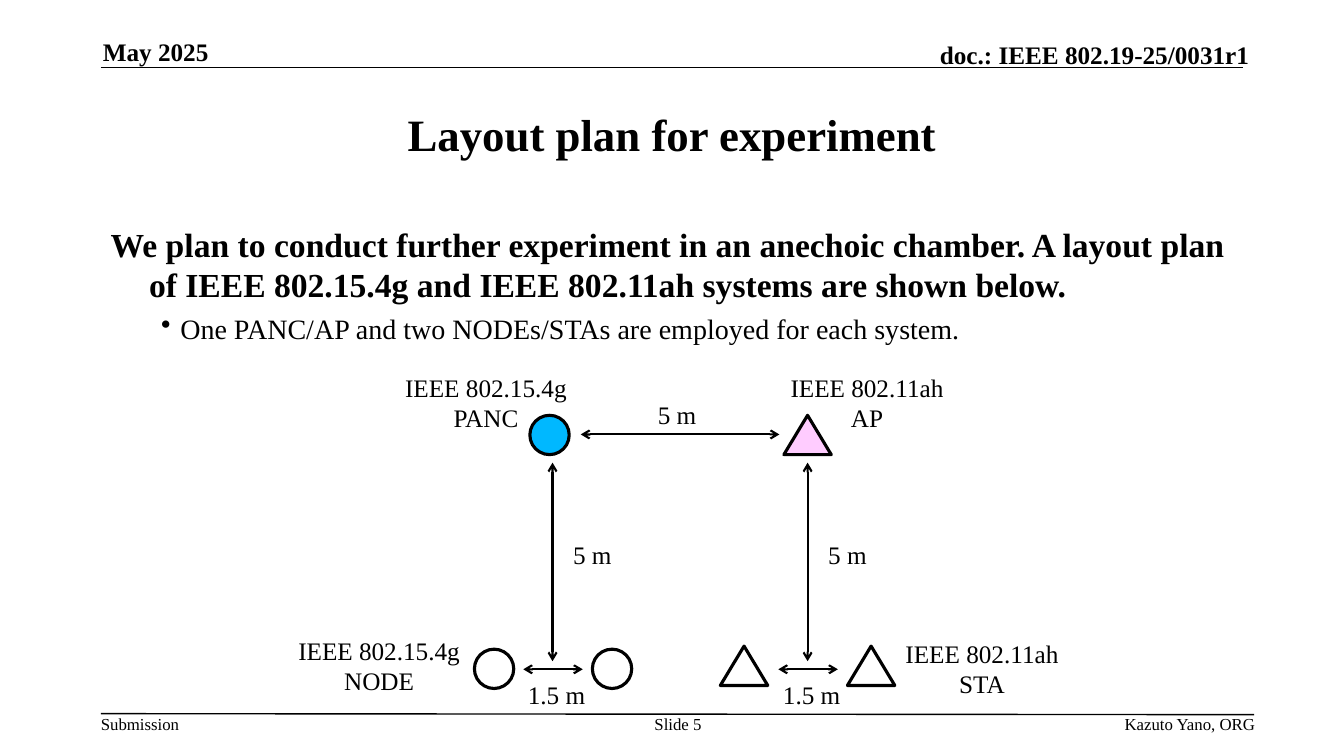
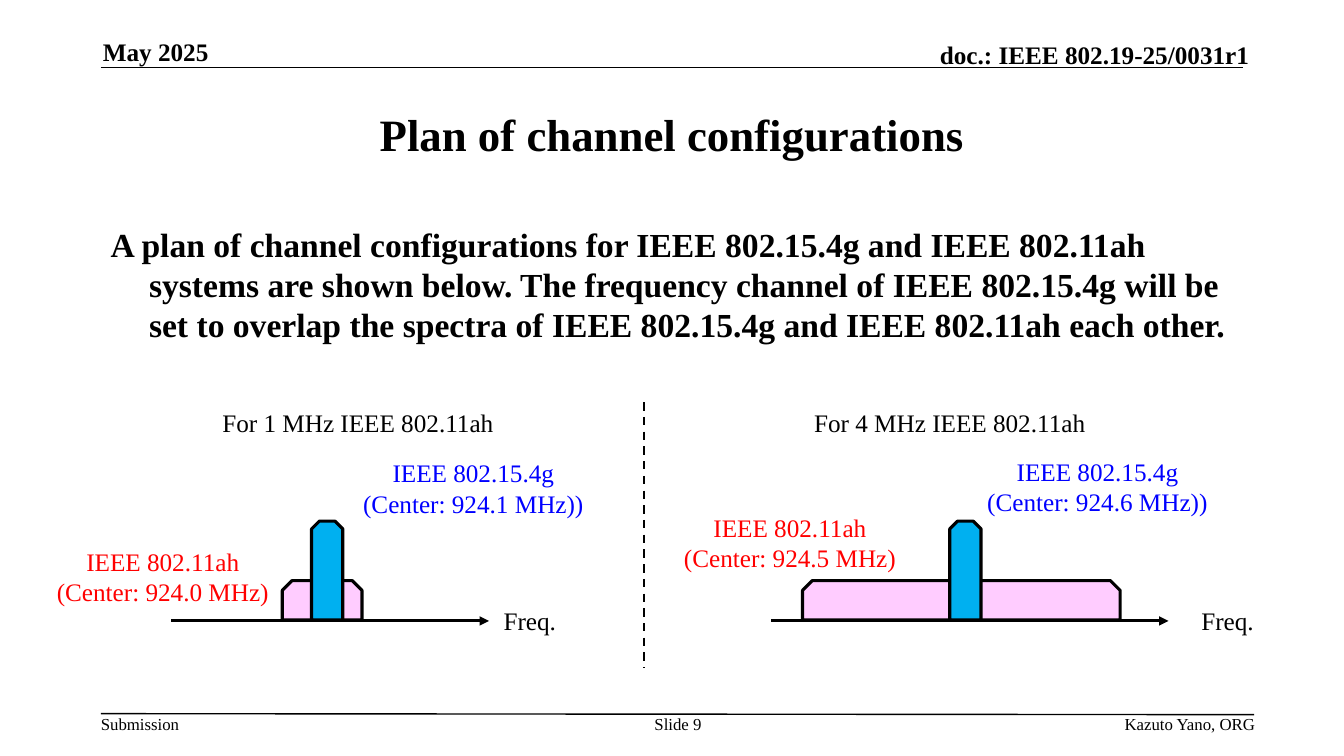
"""Build two slides on the layout and channel plans for a wireless experiment."""
from lxml.etree import SubElement
from pptx import Presentation
from pptx.dml.color import RGBColor
from pptx.enum.dml import MSO_LINE_DASH_STYLE as DASH
from pptx.enum.shapes import MSO_CONNECTOR, MSO_SHAPE as SHAPE
from pptx.enum.text import MSO_ANCHOR as ANCHOR, PP_ALIGN as ALIGN
from pptx.oxml.ns import qn
from pptx.util import Inches, Pt

FONT = "Times New Roman"
COLORS = {
    "black": "000000", "white": "FFFFFF", "red": "FF0000", "blue": "0000FF",
    "panc": "00B8FF", "wpan": "00B0F0", "wlan": "FFCCFF",
}
C = {name: RGBColor.from_string(value) for name, value in COLORS.items()}
WPAN, WLAN = "IEEE 802.15.4g", "IEEE 802.11ah"


def add_text(s, box, lines, size=18, color="black", bold=False, align=ALIGN.CENTER,
             anchor=ANCHOR.TOP, inset=(0.1, 0.05), wrap=False):
    tf = s.shapes.add_textbox(*map(Inches, box)).text_frame
    tf.word_wrap = wrap
    tf.vertical_anchor = anchor
    tf.margin_left = tf.margin_right = Inches(inset[0])
    tf.margin_top = tf.margin_bottom = Inches(inset[1])
    for i, line in enumerate(lines):
        p = tf.add_paragraph() if i else tf.paragraphs[0]
        p.alignment = align
        r = p.add_run()
        r.text = line
        r.font.name, r.font.size, r.font.bold = FONT, Pt(size), bold
        r.font.color.rgb = C[color]
    return tf


def add_line(s, ends, width, head=None, tail=None, dash=None):
    line = s.shapes.add_connector(MSO_CONNECTOR.STRAIGHT, *map(Inches, ends))
    line.line.color.rgb = C["black"]
    line.line.width = Pt(width)
    if dash:
        line.line.dash_style = dash
    spPr = line._element.spPr
    for tag, kind in (("a:headEnd", head), ("a:tailEnd", tail)):
        if kind:
            SubElement(spPr.find(qn("a:ln")), qn(tag), type=kind)
    SubElement(spPr, qn("a:effectLst"))


prs = Presentation()
prs.slide_width, prs.slide_height = Inches(13.33), Inches(7.5)

pages = [
    (5, "Layout plan for experiment", [
        "We plan to conduct further experiment in an anechoic chamber. A layout plan "
        "of IEEE 802.15.4g and IEEE 802.11ah systems are shown below.",
        "One PANC/AP and two NODEs/STAs are employed for each system."]),
    (9, "Plan of channel configurations", [
        "A plan of channel configurations for IEEE 802.15.4g and IEEE 802.11ah systems "
        "are shown below. The frequency channel of IEEE 802.15.4g will be set to overlap "
        "the spectra of IEEE 802.15.4g and IEEE 802.11ah each other."]),
]
frame_texts = [
    ((1.02, 0.36, 2.73, 0.3), "May 2025", 18, True, ALIGN.LEFT, ANCHOR.BOTTOM),
    ((7.29, 0.39, 5.1, 0.3), "doc.: IEEE 802.19-25/0031r1", 18, True, ALIGN.RIGHT, ANCHOR.BOTTOM),
    ((1, 7.08, 0.79, 0.2), "Submission", 12, False, ALIGN.LEFT, ANCHOR.TOP),
    ((6.34, 7.08, 0.77, 0.4), "Slide {}", 12, False, ALIGN.CENTER, ANCHOR.TOP),
    ((7.81, 7.08, 4.64, 0.2), "Kazuto Yano, ORG", 12, False, ALIGN.RIGHT, ANCHOR.TOP),
]

slides = []
for number, title, body in pages:
    s = prs.slides.add_slide(prs.slide_layouts[6])
    s.background.fill.solid()
    s.background.fill.fore_color.rgb = C["white"]
    add_line(s, (1, 0.67, 12.33, 0.67), 1)
    add_line(s, (1, 7.08, 12.44, 7.09), 1)
    for box, words, size, bold, align, anchor in frame_texts:
        add_text(s, box, [words.format(number)], size, "black", bold, align, anchor, (0, 0), True)
    add_text(s, (1, 0.75, 11.33, 1.16), [title], 32, bold=True, anchor=ANCHOR.MIDDLE, wrap=True)
    tf = add_text(s, (1, 2.17, 11.33, 0.95), body, 24, bold=True, align=ALIGN.LEFT, wrap=True)
    for level, p in enumerate(tf.paragraphs):
        p.level = level
        p.space_before = Pt(6 - level)
        pPr = p._p.get_or_add_pPr()
        pPr.set("marL", str(Inches((0.38, 0.69)[level])))
        pPr.set("indent", str(Inches((-0.38, -0.19)[level])))
        if level:
            SubElement(pPr, qn("a:buChar"), char="•")
            p.runs[0].font.size, p.runs[0].font.bold = Pt(20), False
    slides.append(s)
layout, channels = slides

shapes = []
systems = [
    (5.48, 5.45, SHAPE.OVAL, 0.39, "panc", (4.9, 6.07), 6.44),
    (8.01, 8.01, SHAPE.ISOSCELES_TRIANGLE, 0.47, "wlan", (7.38, 8.64), 6.41),
]
for axis, hub, kind, width, fill, nodes, node_top in systems:
    shapes.append((layout, kind, (hub - width / 2, 4.12, width, 0.39), fill))
    for node in nodes:
        shapes.append((layout, kind, (node - width / 2, node_top, width, 0.39), None))
    add_line(layout, (axis - 0.29, 6.64, axis + 0.3, 6.64), 1.5, "arrow", "arrow")
    add_line(layout, (axis, 4.59, axis, 6.56), 1.5, "arrow", "arrow")
    add_text(layout, (axis + 0.1, 5.3, 0.59, 0.4), ["5 m"])
    add_text(layout, (axis - 0.35, 6.69, 0.78, 0.4), ["1.5 m"])
add_line(layout, (5.76, 4.31, 7.73, 4.31), 1.5, "arrow", "arrow")
add_text(layout, (6.42, 3.91, 0.59, 0.4), ["5 m"])
for x, y, width, system, role in [
    (3.91, 3.64, 1.82, WPAN, "PANC"), (2.85, 6.25, 1.82, WPAN, "NODE"),
    (7.73, 3.64, 1.74, WLAN, "AP"), (8.87, 6.28, 1.74, WLAN, "STA"),
]:
    add_text(layout, (x, y, width, 0.71), [system, role])

plans = [
    ("1", 2.09, (1.7, 4.85), 4.89, (2.8, 0.79), 3.09, (0.45, 5.37, "924.0"), (3.49, 4.49, "924.1")),
    ("4", 7.96, (7.65, 11.59), 11.81, (7.96, 3.15), 9.42, (6.67, 5.03, "924.5"), (9.68, 4.48, "924.6")),
]
for mhz, heading_x, (start, end), freq_x, (wide_x, wide_w), narrow_x, wlan, wpan in plans:
    add_text(channels, (heading_x, 3.99, 2.92, 0.4), [f"For {mhz} MHz {WLAN}"])
    add_line(channels, (start, 6.16, end, 6.16), 2.25, tail="triangle")
    add_text(channels, (freq_x, 5.96, 0.73, 0.4), ["Freq."])
    shapes.append((channels, SHAPE.SNIP_2_SAME_RECTANGLE, (wide_x, 5.76, wide_w, 0.39), "wlan"))
    shapes.append((channels, SHAPE.SNIP_2_SAME_RECTANGLE, (narrow_x, 5.17, 0.31, 0.98), "wpan"))
    x, y, center = wlan
    add_text(channels, (x, y, 2.33, 0.71), [WLAN, f"(Center: {center} MHz)"], color="red")
    x, y, center = wpan
    add_text(channels, (x, y, 2.41, 0.71), [WPAN, f"(Center: {center} MHz))"], color="blue")
add_line(channels, (6.39, 3.99, 6.39, 6.62), 1.5, dash=DASH.DASH)

for s, kind, box, fill in shapes:
    sp = s.shapes.add_shape(kind, *map(Inches, box))
    sp.shadow.inherit = False
    sp.line.color.rgb = C["black"]
    sp.line.width = Pt(2.25)
    if fill:
        sp.fill.solid()
        sp.fill.fore_color.rgb = C[fill]
    else:
        sp.fill.background()
    if kind == SHAPE.SNIP_2_SAME_RECTANGLE:
        sp.adjustments[0] = 0.25

prs.save("out.pptx")
